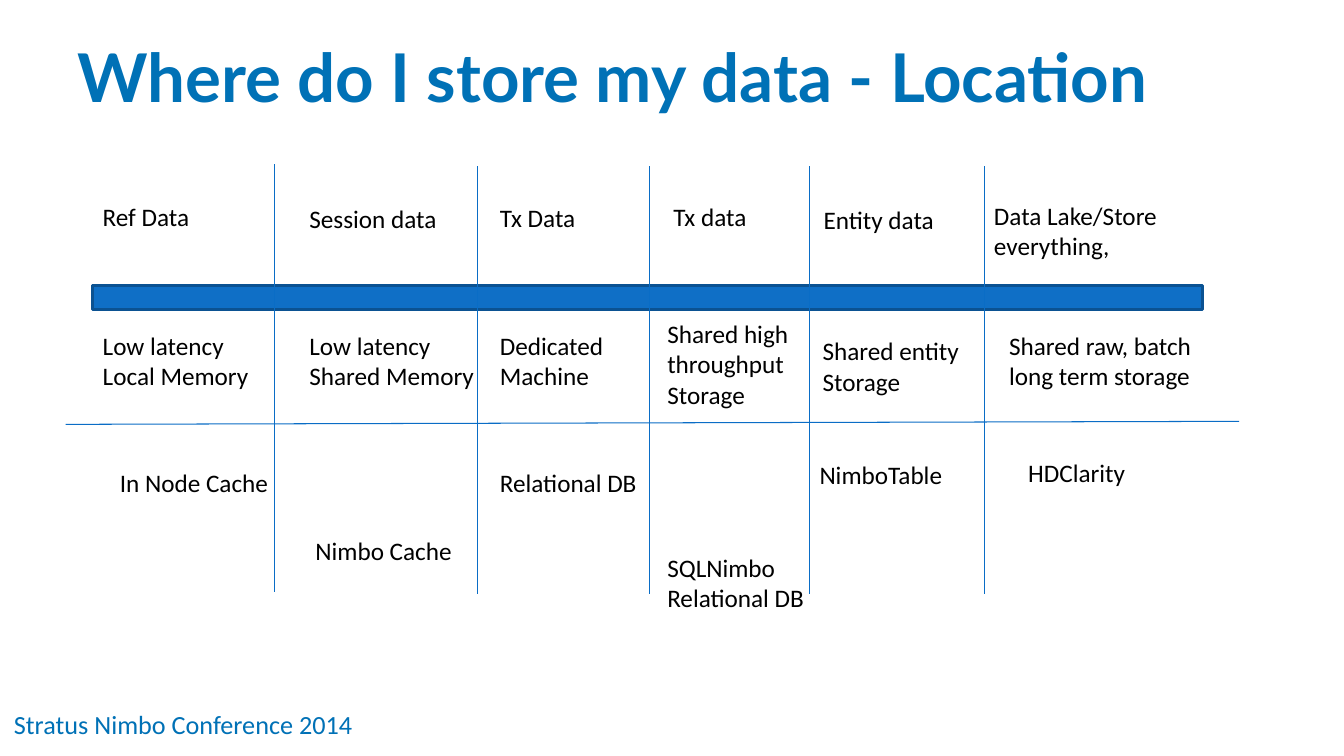
from lxml import etree
from pptx import Presentation
from pptx.dml.color import RGBColor
from pptx.enum import shapes, text
from pptx.oxml.ns import qn
from pptx.util import Inches, Pt

TITLE_BLUE = "0071B6"
LINE_BLUE = "0A6DC6"
LABEL = {"name": "Calibri", "size": Pt(18), "bold": False}
TITLE = {"name": "Lato", "size": Pt(48), "bold": True}
FOOTER = {"name": "Calibri", "size": Pt(18.7), "bold": False}

# Each label: left, top, width, lines
DATA_KINDS = [
    (0.92, 1.95, 1.07, ["Ref Data"]),
    (2.97, 1.97, 1.48, ["Session data"]),
    (4.86, 1.96, 0.96, ["Tx Data"]),
    (6.58, 1.95, 0.93, ["Tx data"]),
    (8.07, 1.98, 1.31, ["Entity data"]),
    (9.76, 1.94, 1.89, ["Data Lake/Store", "everything,"]),
]
STORAGE_NEEDS = [
    (0.92, 3.23, 1.72, ["Low latency", "Local Memory"]),
    (2.97, 3.23, 1.89, ["Low latency", "Shared Memory"]),
    (4.86, 3.23, 1.3, ["Dedicated", "Machine"]),
    (6.52, 3.11, 1.47, ["Shared high", "throughput", "Storage"]),
    (8.06, 3.28, 1.63, ["Shared entity", "Storage"]),
    (9.91, 3.23, 2.09, ["Shared raw, batch", "long term storage"]),
]
PRODUCTS = [
    (1.09, 4.59, 1.69, ["In Node Cache"]),
    (3.03, 5.26, 1.65, ["Nimbo Cache"]),
    (4.86, 4.59, 1.57, ["Relational DB"]),
    (6.52, 5.43, 1.57, ["SQLNimbo", "Relational DB"]),
    (8.03, 4.51, 1.6, ["NimboTable"]),
    (10.1, 4.49, 1.2, ["HDClarity"]),
]
# Each divider: x, top
DIVIDERS = [(2.72, 1.63), (4.74, 1.65), (6.44, 1.65), (8.03, 1.65), (9.76, 1.65)]
DIVIDER_LENGTH = 4.24


def color(value):
    return RGBColor.from_string(value)


def add_text(slide, left, top, width, height, lines, font_format=LABEL,
             font_color="000000", wrap=False):
    """Add a top-anchored text box with one paragraph per line."""
    box = slide.shapes.add_textbox(Inches(left), Inches(top), Inches(width), Inches(height))
    frame = box.text_frame
    frame.word_wrap = wrap
    frame.auto_size = text.MSO_AUTO_SIZE.NONE if wrap else text.MSO_AUTO_SIZE.SHAPE_TO_FIT_TEXT
    frame.text = "\n".join(lines)
    for paragraph in frame.paragraphs:
        for attribute, value in font_format.items():
            setattr(paragraph.font, attribute, value)
        paragraph.font.color.rgb = color(font_color)


def add_labels(slide, labels):
    for left, top, width, lines in labels:
        add_text(slide, left, top, width, 0.1 + 0.305 * len(lines), lines)


def add_line(slide, x1, y1, x2, y2):
    line = slide.shapes.add_connector(
        shapes.MSO_CONNECTOR.STRAIGHT, Inches(x1), Inches(y1), Inches(x2), Inches(y2))
    line.line.color.rgb = color(LINE_BLUE)
    line.line.width = Pt(0.75)
    etree.SubElement(line._element.spPr, qn("a:effectLst"))


def add_bar(slide, left, top, width, height):
    bar = slide.shapes.add_shape(
        shapes.MSO_SHAPE.RECTANGLE, Inches(left), Inches(top), Inches(width), Inches(height))
    bar.shadow.inherit = False
    bar.fill.solid()
    bar.fill.fore_color.rgb = color("0F6FC6")
    bar.line.color.rgb = color("0B5292")
    bar.line.width = Pt(2)


def main():
    presentation = Presentation()
    presentation.slide_width = Inches(13.33)
    presentation.slide_height = Inches(7.5)
    slide = presentation.slides.add_slide(presentation.slide_layouts[6])

    add_text(slide, 0.04, 6.98, 3.72, 0.42, ["Stratus Nimbo Conference 2014"], FOOTER, TITLE_BLUE)
    add_text(slide, 0.67, 0.3, 12, 1.25, ["Where do I store my data - Location"],
             TITLE, TITLE_BLUE, wrap=True)
    add_bar(slide, 0.92, 2.83, 11.01, 0.24)
    for labels in (STORAGE_NEEDS, DATA_KINDS, PRODUCTS):
        add_labels(slide, labels)
    add_line(slide, 0.65, 4.21, 12.29, 4.18)
    for x, top in DIVIDERS:
        add_line(slide, x, top, x, top + DIVIDER_LENGTH)

    presentation.save("out.pptx")


if __name__ == "__main__":
    main()
